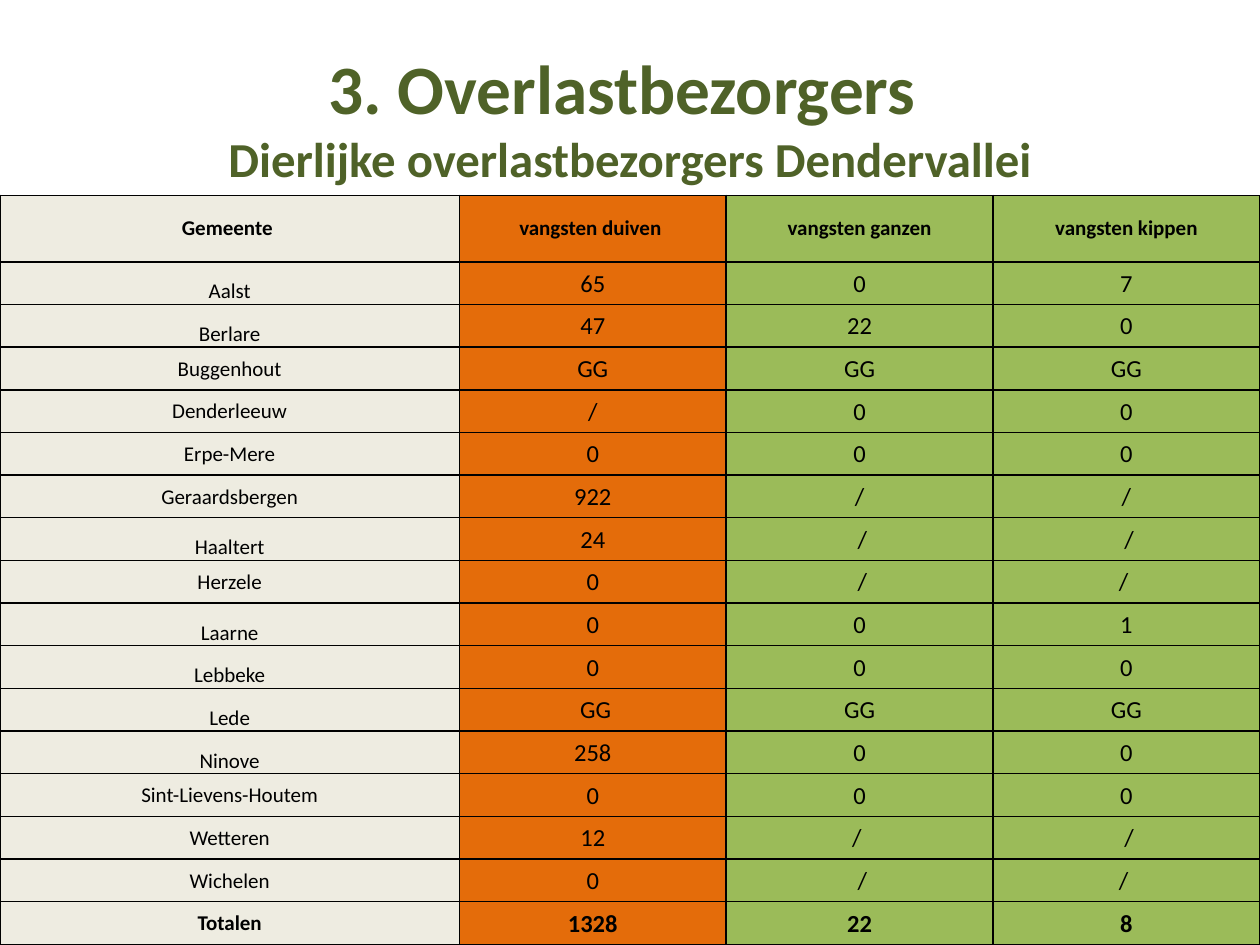
from lxml import etree
from pptx import Presentation
from pptx.dml.color import RGBColor
from pptx.enum.text import MSO_ANCHOR, MSO_AUTO_SIZE, PP_ALIGN
from pptx.oxml.ns import qn
from pptx.util import Pt

FONT = "Calibri"
COLORS = {
    "title": "4F6228",
    "text": "000000",
    "border": "000000",
    "municipality": "EEECE1",
    "pigeons": "E46C0A",
    "poultry": "9BBB59",
}
COLUMN_FILLS = ["municipality", "pigeons", "poultry", "poultry"]
COLUMN_WIDTHS = [262.5, 152.5, 152.5, 152.5]
HEADER_HEIGHT = 38

CATCHES = [
    ("Gemeente ", "vangsten duiven ", "vangsten ganzen", "vangsten kippen"),
    ("Aalst", "65", "0", "7"),
    ("Berlare", "47", "22", "0"),
    ("Buggenhout", "GG", "GG", "GG"),
    ("Denderleeuw", "/", "0", "0"),
    ("Erpe-Mere", "0", "0", "0"),
    ("Geraardsbergen", "922", "/", "/"),
    ("Haaltert", "24", " /", " /"),
    ("Herzele", "0", " /", "/ "),
    ("Laarne", "0", "0", "1"),
    ("Lebbeke", "0", "0", "0"),
    ("Lede", " GG", "GG", "GG"),
    ("Ninove", "258", "0", "0"),
    ("Sint-Lievens-Houtem", "0", "0", "0"),
    ("Wetteren", "12", "/ ", " /"),
    ("Wichelen", "0", " /", "/ "),
    ("Totalen", "1328", "22", "8"),
]
LOW_NAMES = {"Aalst", "Berlare", "Haaltert", "Laarne", "Lebbeke", "Lede", "Ninove"}


def rgb(name):
    return RGBColor.from_string(COLORS[name])


def style_font(font, size, bold, color):
    font.name = FONT
    font.size = Pt(size)
    font.bold = bold
    font.color.rgb = rgb(color)


def add_borders(cell):
    properties = cell._tc.get_or_add_tcPr()
    for side in ("lnL", "lnR", "lnT", "lnB"):
        line = etree.SubElement(properties, qn(f"a:{side}"), w=str(Pt(1)))
        fill = etree.SubElement(line, qn("a:solidFill"))
        etree.SubElement(fill, qn("a:srgbClr"), val=COLORS["border"])


def place_title(slide, left, top, width, height):
    title = slide.shapes.title
    title.left, title.top = Pt(left), Pt(top)
    title.width, title.height = Pt(width), Pt(height)
    frame = title.text_frame
    frame.auto_size = MSO_AUTO_SIZE.NONE
    frame.vertical_anchor = MSO_ANCHOR.MIDDLE
    heading = frame.paragraphs[0]
    heading.text = "3. Overlastbezorgers \vDierlijke overlastbezorgers Dendervallei"
    heading.alignment = PP_ALIGN.CENTER
    for run, size in zip(heading.runs, (39.6, 27.9)):
        style_font(run.font, size, True, "title")


def fill_cell(cell, value, row, column):
    """Write and format one cell according to its place in the table."""
    is_header, is_total = row == 0, row == len(CATCHES) - 1
    is_label = is_header or column == 0
    is_wide = is_header or (is_total and column == 0)
    cell.margin_left = cell.margin_right = Pt(2 if is_wide else 0.75)
    cell.margin_top = Pt(0 if is_wide else 0.75)
    cell.margin_bottom = Pt(0)
    is_low = column == 0 and value in LOW_NAMES
    cell.vertical_anchor = MSO_ANCHOR.BOTTOM if is_low else MSO_ANCHOR.MIDDLE
    add_borders(cell)
    cell.fill.solid()
    cell.fill.fore_color.rgb = rgb(COLUMN_FILLS[column])
    paragraph = cell.text_frame.paragraphs[0]
    paragraph.text = value
    paragraph.alignment = PP_ALIGN.CENTER
    style_font(paragraph.runs[0].font, 12 if is_label else 14,
               is_header or is_total, "text")


def place_catches(slide, left, top, width, height):
    table = slide.shapes.add_table(
        len(CATCHES), len(COLUMN_WIDTHS), Pt(left), Pt(top), Pt(width), Pt(height)
    ).table
    table.first_row = table.horz_banding = False
    for column, share in zip(table.columns, COLUMN_WIDTHS):
        column.width = Pt(width * share / sum(COLUMN_WIDTHS))
    body_height = (height - HEADER_HEIGHT) / (len(CATCHES) - 1)
    for row, values in enumerate(CATCHES):
        table.rows[row].height = Pt(body_height if row else HEADER_HEIGHT)
        for column, value in enumerate(values):
            fill_cell(table.cell(row, column), value, row, column)


def main():
    deck = Presentation()
    deck.slide_width, deck.slide_height = Pt(720), Pt(540)
    slide = deck.slides.add_slide(deck.slide_layouts[5])
    place_title(slide, 36, 21.6, 648, 90)
    place_catches(slide, 0, 111.6, 720, 428.4)
    deck.save("out.pptx")


if __name__ == "__main__":
    main()
